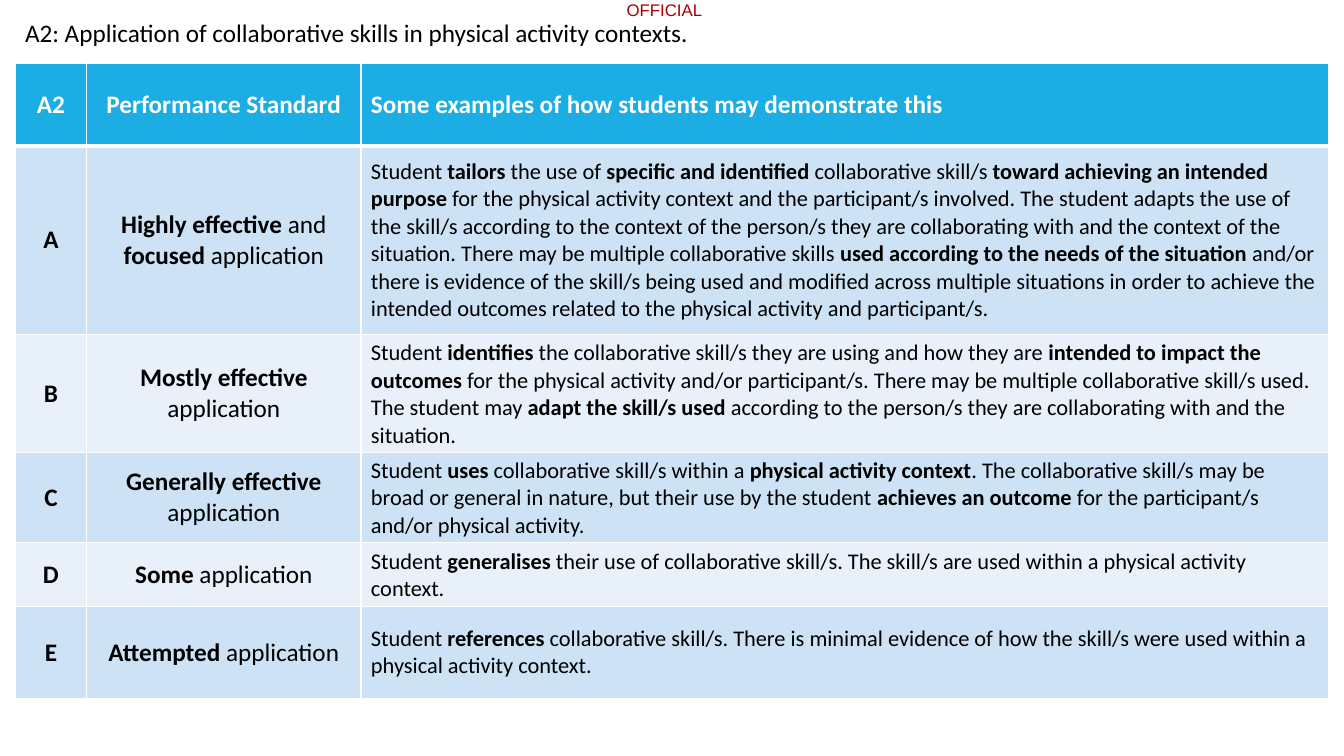
import pptx
import pptx.dml.color
import pptx.enum.text
import pptx.oxml
import pptx.oxml.ns
import pptx.util
from pptx.util import Inches

COLORS = {
    "header": "1CADE4",
    "band_dark": "CDE3F5",
    "band_light": "E8F1FA",
    "white": "FFFFFF",
    "black": "000000",
    "marking": "A80000",
}
COLUMN_WIDTHS = [0.71, 2.72, 9.6]
ROW_HEIGHTS = [0.82, 1.87, 1.11, 0.85, 0.62, 0.91]
CENTER = pptx.enum.text.PP_ALIGN.CENTER
LEFT = pptx.enum.text.PP_ALIGN.LEFT

# Text between ** marks is bold
ROWS = [
    ["**A2**", "**Performance Standard**",
     "**Some examples of how students may demonstrate this**"],
    ["**A**", "**Highly effective **and **focused **application",
     "Student **tailors** the use of **specific and identified** collaborative skill/s "
     "**toward achieving an intended purpose** for the physical activity context and the "
     "participant/s involved. The student adapts the use of the skill/s according to the "
     "context of the person/s they are collaborating with and the context of the situation. "
     "There may be multiple collaborative skills **used according to the needs of the "
     "situation** and/or there is evidence of the skill/s being used and modified across "
     "multiple situations in order to achieve the intended outcomes related to the physical "
     "activity and participant/s."],
    ["**B**", "**Mostly effective **application",
     "Student **identifies** the collaborative skill/s they are using and how they are "
     "**intended to impact the outcomes **for the physical activity and/or participant/s. "
     "There may be multiple collaborative skill/s used. The student may **adapt the skill/s "
     "used **according to the person/s they are collaborating with and the situation."],
    ["**C**", "**Generally effective **application",
     "Student **uses** collaborative skill/s within a **physical activity context**. The "
     "collaborative skill/s may be broad or general in nature, but their use by the student "
     "**achieves an outcome **for the participant/s and/or physical activity."],
    ["**D**", "**Some** application",
     "Student **generalises** their use of collaborative skill/s. The skill/s are used "
     "within a physical activity context."],
    ["**E**", "**Attempted** application",
     "Student **references **collaborative skill/s. There is minimal evidence of how the "
     "skill/s were used within a physical activity context."],
]


def rgb(name):
    return pptx.dml.color.RGBColor.from_string(COLORS[name])


def write_runs(p, text, size, color, font="Calibri", align=LEFT):
    p.alignment = align
    for i, part in enumerate(text.split("**")):
        if part:
            r = p.add_run()
            r.text = part
            r.font.name = font
            r.font.size = pptx.util.Pt(size)
            r.font.bold = i % 2 == 1
            r.font.color.rgb = rgb(color)


def add_text(slide, text, left, top, width, height, size, color, font, align=LEFT):
    tf = slide.shapes.add_textbox(
        Inches(left), Inches(top), Inches(width), Inches(height)).text_frame
    tf.word_wrap = True
    write_runs(tf.paragraphs[0], text, size, color, font, align)
    return tf


def set_borders(cell, bottom_width):
    tc_pr = cell._tc.get_or_add_tcPr()
    for side, width in (("L", 1), ("R", 1), ("T", 1), ("B", bottom_width)):
        tc_pr.append(pptx.oxml.parse_xml(
            f'<a:ln{side} {pptx.oxml.ns.nsdecls("a")} w="{pptx.util.Pt(width)}">'
            f'<a:solidFill><a:srgbClr val="{COLORS["white"]}"/></a:solidFill>'
            f'</a:ln{side}>'))


def fill_cell(cell, text, row, col):
    is_header = row == 0
    set_borders(cell, 3 if is_header else 1)
    band = "header" if is_header else "band_dark" if row % 2 else "band_light"
    cell.fill.solid()
    cell.fill.fore_color.rgb = rgb(band)
    cell.vertical_anchor = pptx.enum.text.MSO_ANCHOR.MIDDLE
    is_example = col == 2
    write_runs(cell.text_frame.paragraphs[0], text,
               16 if is_example and not is_header else 18,
               "white" if is_header else "black",
               align=LEFT if is_example else CENTER)


def add_standards_table(slide):
    table = slide.shapes.add_table(
        len(ROWS), len(COLUMN_WIDTHS), Inches(0.15), Inches(0.63),
        Inches(sum(COLUMN_WIDTHS)), Inches(sum(ROW_HEIGHTS))).table
    for column, width in zip(table.columns, COLUMN_WIDTHS):
        column.width = Inches(width)
    for row, height in zip(table.rows, ROW_HEIGHTS):
        row.height = Inches(height)
    for i, texts in enumerate(ROWS):
        for j, text in enumerate(texts):
            fill_cell(table.cell(i, j), text, i, j)


def main():
    prs = pptx.Presentation()
    prs.slide_width, prs.slide_height = Inches(13.33), Inches(7.5)
    slide = prs.slides.add_slide(prs.slide_layouts[6])

    # Classification marking
    tf = add_text(slide, "OFFICIAL", 6.19, 0, 0.8, 0.2, 12, "marking", "Arial", CENTER)
    tf.margin_left = tf.margin_right = tf.margin_top = tf.margin_bottom = 0

    # Performance standards
    add_standards_table(slide)

    # Heading
    tf = add_text(slide, "A2: Application of collaborative skills in physical activity contexts.",
                  0.15, 0.12, 13.04, 0.4, 18, "black", "Calibri")
    tf.paragraphs[0].space_after = pptx.util.Pt(6)

    prs.save("out.pptx")


if __name__ == "__main__":
    main()
